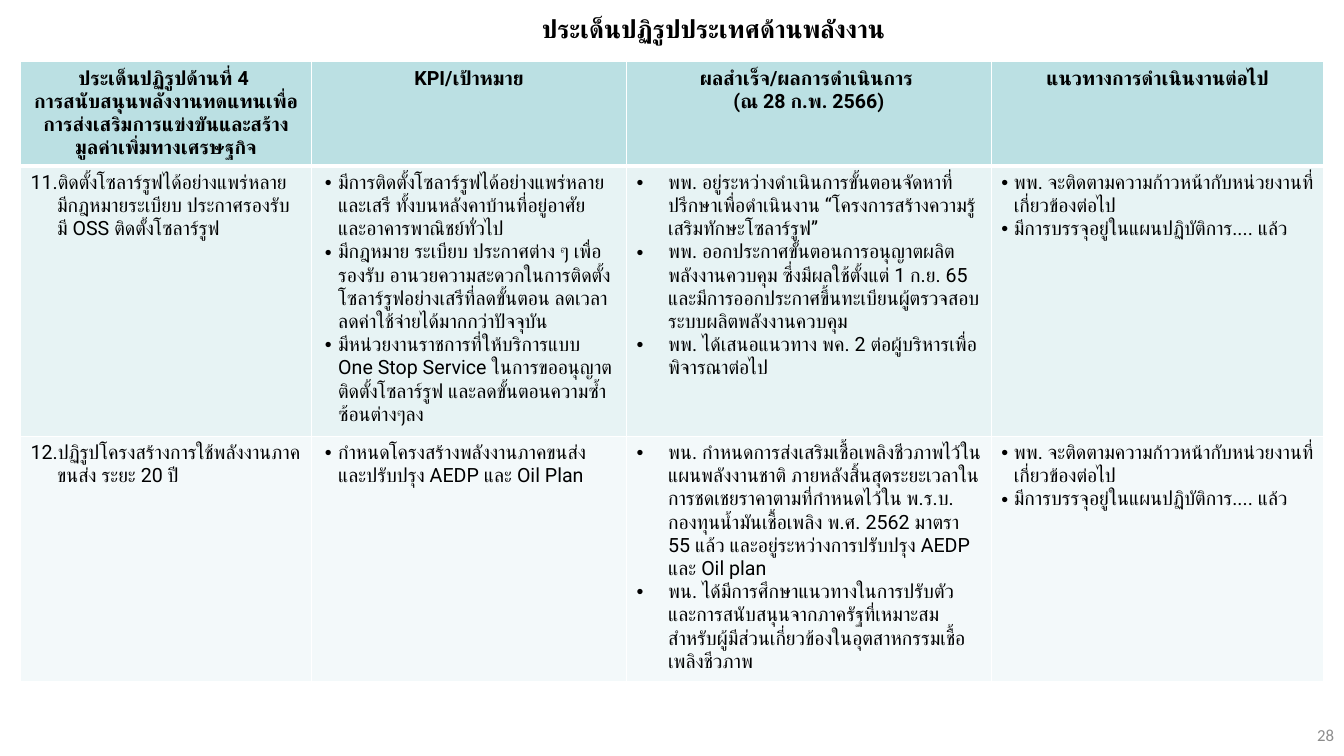
from lxml import etree
from pptx import Presentation
from pptx.dml.color import RGBColor
from pptx.enum.text import MSO_ANCHOR, PP_ALIGN
from pptx.oxml.ns import qn
from pptx.util import Pt

LEFT, CENTER, RIGHT = PP_ALIGN.LEFT, PP_ALIGN.CENTER, PP_ALIGN.RIGHT
TOP = MSO_ANCHOR.TOP

# Content
TITLE = "ประเด็นปฏิรูปประเทศด้านพลังงาน"
PAGE_NUMBER = "28"
NEXT_STEPS = [
    "พพ. จะติดตามความก้าวหน้ากับหน่วยงานที่เกี่ยวข้องต่อไป",
    "มีการบรรจุอยู่ในแผนปฏิบัติการ.... แล้ว",
]
ROWS = [
    [
        ["ประเด็นปฏิรูปด้านที่ 4 ",
         "การสนับสนุนพลังงานทดแทนเพื่อการส่งเสริมการแข่งขันและสร้างมูลค่าเพิ่มทางเศรษฐกิจ"],
        ["KPI/เป้าหมาย"],
        ["ผลสำเร็จ/ผลการดำเนินการ ", "(ณ 28 ก.พ. 2566)"],
        ["แนวทางการดำเนินงานต่อไป"],
    ],
    [
        ["11.ติดตั้งโซลาร์รูฟได้อย่างแพร่หลาย มีกฎหมายระเบียบ ประกาศรองรับ มี OSS ติดตั้งโซลาร์รูฟ"],
        ["มีการติดตั้งโซลาร์รูฟได้อย่างแพร่หลายและเสรี ทั้งบนหลังคาบ้านที่อยู่อาศัยและอาคารพาณิชย์ทั่วไป",
         "มีกฎหมาย ระเบียบ ประกาศต่าง ๆ เพื่อรองรับ อานวยความสะดวกในการติดตั้งโซลาร์รูฟอย่างเสรี"
         "ที่ลดขั้นตอน ลดเวลา ลดค่าใช้จ่ายได้มากกว่าปัจจุบัน",
         "มีหน่วยงานราชการที่ให้บริการแบบ One Stop Service ในการขออนุญาตติดตั้งโซลาร์รูฟ "
         "และลดขั้นตอนความซ้ำซ้อนต่างๆลง"],
        ["พพ. อยู่ระหว่างดำเนินการขั้นตอนจัดหาที่ปรึกษาเพื่อดำเนินงาน "
         "“โครงการสร้างความรู้ เสริมทักษะโซลาร์รูฟ”",
         "พพ. ออกประกาศขั้นตอนการอนุญาตผลิตพลังงานควบคุม ซึ่งมีผลใช้ตั้งแต่ 1 ก.ย. 65 "
         "และมีการออกประกาศขึ้นทะเบียนผู้ตรวจสอบระบบผลิตพลังงานควบคุม",
         "พพ. ได้เสนอแนวทาง พค. 2 ต่อผู้บริหารเพื่อพิจารณาต่อไป"],
        NEXT_STEPS,
    ],
    [
        ["12.ปฏิรูปโครงสร้างการใช้พลังงานภาคขนส่ง ระยะ 20 ปี"],
        ["กำหนดโครงสร้างพลังงานภาคขนส่ง และปรับปรุง AEDP และ Oil Plan"],
        ["พน. กำหนดการส่งเสริมเชื้อเพลิงชีวภาพไว้ในแผนพลังงานชาติ "
         "ภายหลังสิ้นสุดระยะเวลาในการชดเชยราคาตามที่กำหนดไว้ใน พ.ร.บ. กองทุนน้ำมันเชื้อเพลิง "
         "พ.ศ. 2562 มาตรา 55 แล้ว และอยู่ระหว่างการปรับปรุง AEDP และ Oil plan",
         "พน. ได้มีการศึกษาแนวทางในการปรับตัวและการสนับสนุนจากภาครัฐที่เหมาะสม"
         "สำหรับผู้มีส่วนเกี่ยวข้องในอุตสาหกรรมเชื้อเพลิงชีวภาพ"],
        NEXT_STEPS,
    ],
]

# Layout and style
SLIDE_SIZE = (960, 540)
TABLE_LEFT, TABLE_TOP = 14.6, 44.2
COLUMN_WIDTHS = [208, 225, 260.5, 237.5]
ROW_HEIGHTS = [73, 193, 175]
ROW_FILLS = ["BBE0E3", "E7F3F4", "F3F9FA"]
INDENTS = [19, 9.5, 22.5, 9]
SIDE_MARGINS = [7.2, 9.5, 7.2, 7.2]
BLACK, WHITE, GREY = "000000", "FFFFFF", "8C8C8C"


def color(hex_string):
    return RGBColor.from_string(hex_string)


def style_paragraph(paragraph, size, font_name, hex_color, bold, alignment):
    paragraph.alignment = alignment
    for run in paragraph.runs:
        font = run.font
        font.size, font.name, font.bold = Pt(size), font_name, bold
        font.color.rgb = color(hex_color)
        # Thai text takes its typeface from the complex-script font
        script_font = etree.SubElement(run._r.get_or_add_rPr(), qn("a:cs"))
        script_font.set("typeface", font_name)


def add_text(slide, box, text, *style):
    shape = slide.shapes.add_textbox(*[Pt(value) for value in box])
    text_frame = shape.text_frame
    text_frame.word_wrap = True
    text_frame.text = text
    style_paragraph(text_frame.paragraphs[0], *style)
    return text_frame


def set_indent(paragraph, indent, bulleted):
    properties = paragraph._p.get_or_add_pPr()
    properties.set("marL", str(Pt(indent)))
    properties.set("indent", str(-Pt(indent)))
    if bulleted:
        etree.SubElement(properties, qn("a:buFont")).set("typeface", "Arial")
        etree.SubElement(properties, qn("a:buChar")).set("char", "•")


def set_borders(cell, widths):
    properties = cell._tc.get_or_add_tcPr()
    for position, (side, width) in enumerate(widths.items()):
        line = etree.Element(qn("a:ln" + side), w=str(Pt(width)))
        fill = etree.SubElement(line, qn("a:solidFill"))
        etree.SubElement(fill, qn("a:srgbClr"), val=WHITE)
        properties.insert(position, line)


def fill_cell(cell, row, column, lines):
    is_header = row == 0
    cell.fill.solid()
    cell.fill.fore_color.rgb = color(ROW_FILLS[row])
    cell.vertical_anchor = TOP
    margin = 7.2 if is_header else SIDE_MARGINS[column]
    cell.margin_left = cell.margin_right = Pt(margin)
    cell.margin_top = cell.margin_bottom = Pt(3.6)
    set_borders(cell, {"L": 1, "R": 1, "T": 3 if row == 1 else 1, "B": 3 if is_header else 1})
    cell.text_frame.text = "\n".join(lines)
    for paragraph in cell.text_frame.paragraphs:
        style_paragraph(paragraph, 14, "Roboto", BLACK, is_header, CENTER if is_header else LEFT)
        if not is_header:
            set_indent(paragraph, INDENTS[column], column > 0)


def main():
    presentation = Presentation()
    presentation.slide_width, presentation.slide_height = [Pt(side) for side in SLIDE_SIZE]
    slide = presentation.slides.add_slide(presentation.slide_layouts[6])

    # Page number and title
    number_frame = add_text(slide, (744, 510.5, 216, 28.8), PAGE_NUMBER,
                            12, "Calibri", GREY, False, RIGHT)
    number_frame.vertical_anchor = MSO_ANCHOR.MIDDLE
    add_text(slide, (258.5, 5.8, 502, 29), TITLE, 18, "Roboto", BLACK, True, CENTER)

    # Reform table
    frame = slide.shapes.add_table(
        len(ROWS), len(COLUMN_WIDTHS), Pt(TABLE_LEFT), Pt(TABLE_TOP),
        Pt(sum(COLUMN_WIDTHS)), Pt(sum(ROW_HEIGHTS)))
    table = frame.table
    for column, width in zip(table.columns, COLUMN_WIDTHS):
        column.width = Pt(width)
    for row, height in zip(table.rows, ROW_HEIGHTS):
        row.height = Pt(height)
    for row, cells in enumerate(ROWS):
        for column, lines in enumerate(cells):
            fill_cell(table.cell(row, column), row, column, lines)

    presentation.save("out.pptx")


if __name__ == "__main__":
    main()
